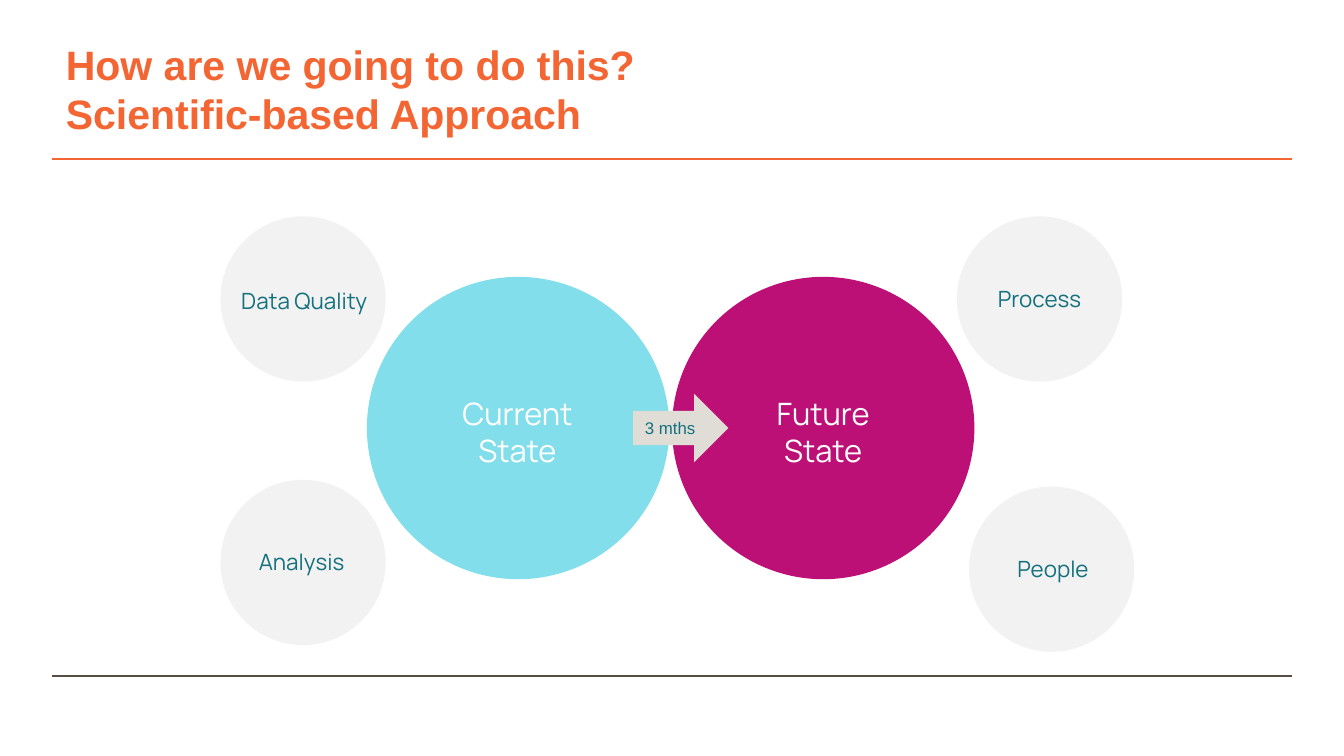
from pptx import Presentation
from pptx.dml.color import RGBColor
from pptx.enum import shapes, text
from pptx.oxml.ns import qn
from pptx.util import Inches, Pt
from lxml import etree

THEME = {
    "orange": "F36633", "olive": "544F40", "teal": "15717D", "white": "FFFFFF",
    "pale": "F2F2F2", "aqua": "82DEEA", "magenta": "BC1077", "sand": "E0DDD6",
    "title": 22, "state": 16.5, "factor": 12, "time": 9,
    "head_font": "Arial", "body_font": "Manrope",
}
TITLE = ["How are we going to do this?", "Scientific-based Approach"]
RULES = [(1.18, "orange"), (5.03, "olive")]
FACTOR_SIZE, STATE_SIZE = 1.23, 2.25
FACTORS = [
    ("People", (7.21, 3.62), (7.17, 4.08)),
    ("Analysis", (1.64, 3.57), (1.58, 4.03)),
    ("Data Quality", (1.64, 1.61), (1.6, 2.09)),
    ("Process", (7.12, 1.61), (7.07, 2.07)),
]
STATES = [
    ("Current State", "aqua", 2.73, (3.28, 1.14)),
    ("Future State", "magenta", 5, (5.61, 1.03)),
]
ARROW = ("3 mths", (4.71, 2.93, 0.71, 0.51), (4.7, 3.06, 0.83, 0.25))


def color(name):
    return RGBColor.from_string(THEME[name])


def style(p, size, font, fill, align):
    p.alignment = align
    p.font.size = Pt(THEME[size])
    p.font.name = THEME[font]
    p.font.color.rgb = color(fill)


def add_filled(s, kind, box, fill):
    sp = s.shapes.add_shape(kind, *map(Inches, box))
    sp.shadow.inherit = False
    sp.fill.solid()
    sp.fill.fore_color.rgb = color(fill)
    sp.line.fill.background()


def add_label(s, label, box, size, font, fill, align=text.PP_ALIGN.CENTER):
    tf = s.shapes.add_textbox(*map(Inches, box)).text_frame
    tf.word_wrap = True
    tf.auto_size = text.MSO_AUTO_SIZE.SHAPE_TO_FIT_TEXT
    tf.text = label
    style(tf.paragraphs[0], size, font, fill, align)


def add_rule(s, y, fill):
    line = s.shapes.add_connector(shapes.MSO_CONNECTOR.STRAIGHT,
                                  Inches(0.39), Inches(y), Inches(9.61), Inches(y))
    line.line.color.rgb = color(fill)
    line.line.width = Pt(1)
    etree.SubElement(line._element.spPr, qn("a:effectLst"))


def add_title(s):
    title = s.shapes.title
    title.left, title.top, title.width, title.height = map(Inches, (0.39, 0.24, 8.29, 0.37))
    tf = title.text_frame
    tf.word_wrap = True
    tf.auto_size = text.MSO_AUTO_SIZE.NONE
    tf.vertical_anchor = text.MSO_ANCHOR.TOP
    tf.text = "\n".join(TITLE)
    for p in tf.paragraphs:
        style(p, "title", "head_font", "orange", text.PP_ALIGN.LEFT)
        p.font.bold = True


def main():
    prs = Presentation()
    prs.slide_width = Inches(10)
    prs.slide_height = prs.slide_width * 9 // 16
    s = prs.slides.add_slide(prs.slide_layouts[5])
    add_title(s)
    for y, fill in RULES:
        add_rule(s, y, fill)

    oval = shapes.MSO_SHAPE.OVAL
    for _, corner, _ in FACTORS:
        add_filled(s, oval, (*corner, FACTOR_SIZE, FACTOR_SIZE), "pale")
    for _, fill, x, _ in STATES:
        add_filled(s, oval, (x, 2.06, STATE_SIZE, STATE_SIZE), fill)
    for label, _, corner in FACTORS:
        add_label(s, label, (*corner, 1.33, 0.3), "factor", "body_font", "teal")
    for label, _, _, (x, width) in STATES:
        add_label(s, label, (x, 2.89, width, 0.66), "state", "body_font", "white")

    label, arrow_box, label_box = ARROW
    add_filled(s, shapes.MSO_SHAPE.RIGHT_ARROW, arrow_box, "sand")
    add_label(s, label, label_box, "time", "head_font", "teal", text.PP_ALIGN.LEFT)
    prs.save("out.pptx")


if __name__ == "__main__":
    main()
